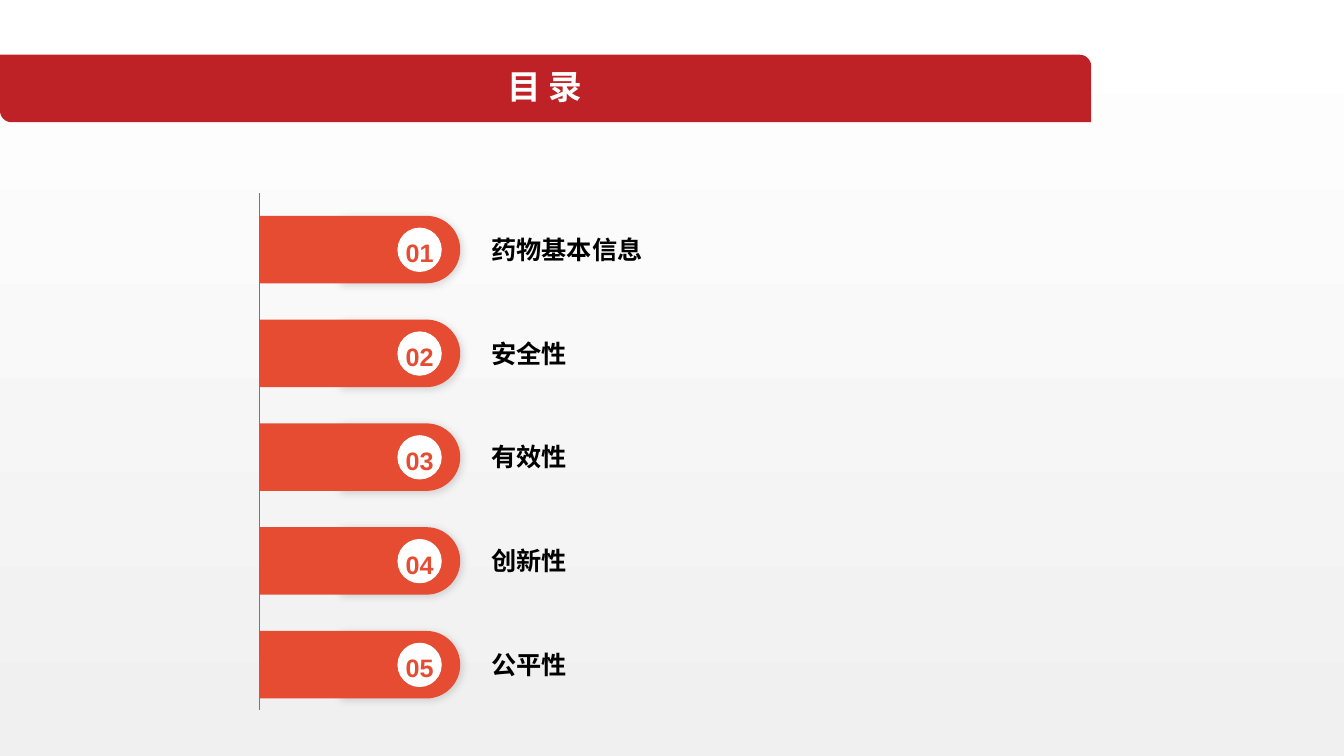
"""Build the contents slide: a title banner and five numbered tabs along a line."""
from lxml import etree
from pptx import Presentation, util as u
from pptx.dml.color import RGBColor
from pptx.enum import shapes, text
from pptx.oxml import parse_xml
from pptx.oxml.ns import nsdecls, qn

ORANGE, RED, WHITE, BLACK = "E54C32", "BE2126", "FFFFFF", "000000"
CJK = "Noto Sans CJK SC"


def paint(shape, color):
    shape.shadow.inherit = False
    shape.fill.solid()
    shape.fill.fore_color.rgb = RGBColor.from_string(color)
    shape.line.fill.background()


def write(shape, words, size=18, font="Arial", color=BLACK, align=text.PP_ALIGN.LEFT,
          anchor=text.MSO_ANCHOR.TOP, inset=(0, 0), spacing=1.0):
    frame = shape.text_frame
    frame.word_wrap = True
    frame.vertical_anchor = anchor
    frame.margin_left = frame.margin_right = u.Cm(inset[0])
    frame.margin_top = frame.margin_bottom = u.Cm(inset[1])
    paragraph = frame.paragraphs[0]
    paragraph.alignment = align
    paragraph.line_spacing = spacing
    run = paragraph.add_run()
    run.text = words
    run.font.size = u.Pt(size)
    run.font.bold = True
    run.font.name = font
    run.font.color.rgb = RGBColor.from_string(color)
    etree.SubElement(run.font._element, qn("a:ea"), typeface=CJK)


deck = Presentation()
deck.slide_width, deck.slide_height = u.Cm(33.87), u.Cm(19.05)
slide = deck.slides.add_slide(deck.slide_layouts[5])

backdrop = slide.background.fill
backdrop.gradient()
backdrop.gradient_angle = 270
for stop, shade, position in zip(backdrop.gradient_stops, (WHITE, "F0F0F0"), (0, 1)):
    stop.color.rgb = RGBColor.from_string(shade)
    stop.position = position

banner = slide.shapes.add_shape(shapes.MSO_SHAPE.ROUND_2_DIAG_RECTANGLE,
                                0, u.Cm(1.38), u.Cm(27.5), u.Cm(1.7))
banner.adjustments[0], banner.adjustments[1] = 0, 0.17
paint(banner, RED)

title = slide.shapes.title
title.left, title.top, title.width, title.height = 0, u.Cm(1.53), u.Cm(27.46), u.Cm(1.27)
write(title, "目 录", size=24, color=WHITE, align=text.PP_ALIGN.CENTER,
      anchor=text.MSO_ANCHOR.MIDDLE)
title._element.addprevious(banner._element)

spine_x = 6.54
spine = slide.shapes.add_connector(shapes.MSO_CONNECTOR.STRAIGHT, u.Cm(spine_x), u.Cm(4.86),
                                   u.Cm(spine_x), u.Cm(17.9))
spine.line.color.rgb = RGBColor.from_string(ORANGE)
spine.line.width = u.Pt(0.5)
etree.SubElement(spine._element.spPr, qn("a:effectLst"))

topics = [("药物基本信息", 11.46), ("安全性", 9.5), ("有效性", 12.45),
          ("创新性", 9.5), ("公平性", 9.5)]
first_top, pitch, tab_height = 5.44, 2.615, 1.7
tip_left, arc_x, radius = 8.54, 10.75, tab_height / 2
reach, bend = arc_x - tip_left, radius * 0.55
quarter_arcs = [
    [(reach + bend, 0), (reach + radius, radius - bend), (reach + radius, radius)],
    [(reach + radius, radius + bend), (reach + bend, tab_height), (reach, tab_height)],
]

for index, (topic, topic_width) in enumerate(topics):
    top = first_top + index * pitch
    entry = slide.shapes.add_group_shape().shapes

    outline = entry.build_freeform(u.Cm(tip_left), u.Cm(top))
    corners = [(reach, 0), (reach + radius, radius), (reach, tab_height), (0, tab_height)]
    outline.add_line_segments([(u.Cm(tip_left + x), u.Cm(top + y)) for x, y in corners])
    tip = outline.convert_to_shape()
    paint(tip, ORANGE)
    segments = list(tip._element.iter(qn("a:lnTo")))
    for segment, curve in zip(segments[1:3], quarter_arcs):
        segment.tag = qn("a:cubicBezTo")
        segment.remove(segment[0])
        for x, y in curve:
            etree.SubElement(segment, qn("a:pt"), x=str(u.Cm(x)), y=str(u.Cm(y)))
    tip._element.spPr.find(qn("a:effectLst")).append(parse_xml(
        f'<a:outerShdw {nsdecls("a")} blurRad="{u.Pt(6)}" dist="{u.Pt(2)}" dir="2700000" '
        'algn="tl" rotWithShape="0"><a:srgbClr val="000000"><a:alpha val="15000"/>'
        '</a:srgbClr></a:outerShdw>'))

    stem = entry.add_shape(shapes.MSO_SHAPE.RECTANGLE, u.Cm(spine_x), u.Cm(top),
                           u.Cm(2), u.Cm(tab_height))
    paint(stem, ORANGE)

    number = entry.add_shape(shapes.MSO_SHAPE.OVAL, u.Cm(10.03), u.Cm(top + 0.31),
                             u.Cm(1.09), u.Cm(1.09))
    paint(number, WHITE)
    number.line.color.rgb = RGBColor.from_string(WHITE)
    number.line.width = u.Pt(0.75)
    write(number, f"{index + 1:02}", color=ORANGE, align=text.PP_ALIGN.CENTER,
          anchor=text.MSO_ANCHOR.MIDDLE, spacing=1.2)

    label = entry.add_textbox(u.Cm(12.2), u.Cm(top + 0.36), u.Cm(topic_width), u.Cm(0.96))
    write(label, topic, font=CJK, inset=(0.18, 0.1))
    label.text_frame.auto_size = text.MSO_AUTO_SIZE.SHAPE_TO_FIT_TEXT

deck.save("out.pptx")
